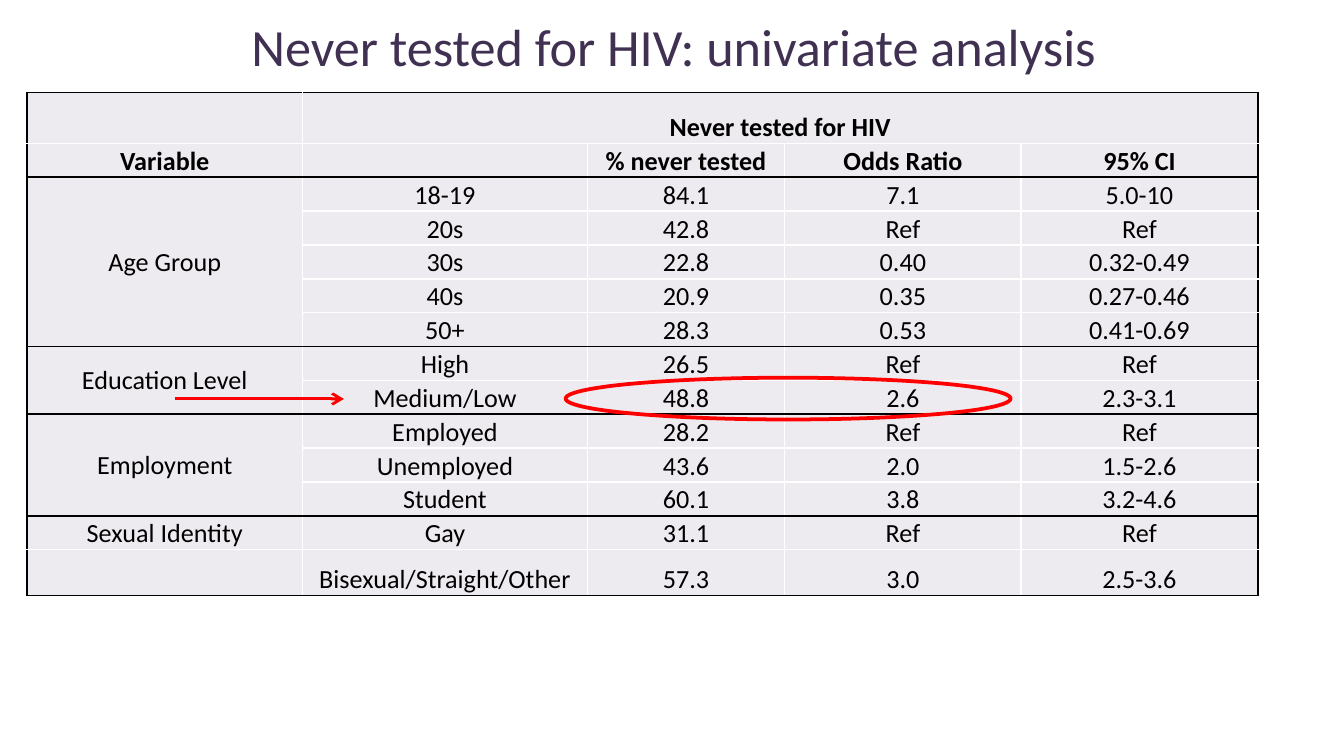
from lxml import etree
from pptx import Presentation
from pptx import util as u
from pptx.dml.color import RGBColor
from pptx.enum import shapes, text
from pptx.oxml import ns

PURPLE = RGBColor(0x40, 0x31, 0x52)
LILAC = RGBColor(0xED, 0xEA, 0xF0)
BLACK = RGBColor(0, 0, 0)
WHITE = RGBColor(255, 255, 255)
RED = RGBColor(255, 0, 0)
FONT = "Calibri"

COLUMN_WIDTHS = (5.21, 5.38, 3.73, 4.47, 4.47)
HEADER_HEIGHT, ROW_HEIGHT, LAST_HEIGHT = 0.96, 0.64, 0.87
HEADINGS = [
    ("", "Never tested for HIV", "", "", ""),
    ("Variable", "", "% never tested", "Odds Ratio", "95% CI"),
]
VARIABLES = [
    ("Age Group", True, [
        ("18-19", "84.1", "7.1", "5.0-10"),
        ("20s", "42.8", "Ref", "Ref"),
        ("30s", "22.8", "0.40", "0.32-0.49"),
        ("40s", "20.9", "0.35", "0.27-0.46"),
        ("50+", "28.3", "0.53", "0.41-0.69"),
    ]),
    ("Education Level", True, [
        ("High", "26.5", "Ref", "Ref"),
        ("Medium/Low", "48.8", "2.6", "2.3-3.1"),
    ]),
    ("Employment", True, [
        ("Employed", "28.2", "Ref", "Ref"),
        ("Unemployed", "43.6", "2.0", "1.5-2.6"),
        ("Student", "60.1", "3.8", "3.2-4.6"),
    ]),
    ("Sexual Identity", False, [
        ("Gay", "31.1", "Ref", "Ref"),
        ("Bisexual/Straight/Other", "57.3", "3.0", "2.5-3.6"),
    ]),
]


def write(frame, words, size, color, bold=False):
    """Add one centred run, or only its text size when there are no words."""
    paragraph = frame.paragraphs[0]
    paragraph.alignment = text.PP_ALIGN.CENTER
    if not words:
        etree.SubElement(paragraph._p, ns.qn("a:endParaRPr"), sz=str(size * 100))
        return
    run = paragraph.add_run()
    run.text = words
    run.font.name = FONT
    run.font.size = u.Pt(size)
    run.font.bold = bold
    run.font.color.rgb = color


def add_title(slide, words):
    """Place the heading across the top of the slide."""
    heading = slide.shapes.add_textbox(u.Cm(1.3), u.Cm(0), u.Cm(22.86), u.Cm(1.73))
    heading.text_frame.word_wrap = True
    heading.text_frame.vertical_anchor = text.MSO_ANCHOR.MIDDLE
    write(heading.text_frame, words, 28, PURPLE)


def set_borders(cell, colors):
    """Draw 1 pt cell edges in the order left, right, top, bottom."""
    properties = cell._tc.get_or_add_tcPr()
    for index, (side, color) in enumerate(zip("LRTB", colors)):
        edge = etree.Element(ns.qn(f"a:ln{side}"), w=str(u.Pt(1)))
        fill = etree.SubElement(edge, ns.qn("a:solidFill"))
        etree.SubElement(fill, ns.qn("a:srgbClr"), val=str(color))
        properties.insert(index, edge)


def fill_cell(cell, words, bold, anchor):
    """Give a cell its text, small insets and background."""
    cell.margin_left = cell.margin_right = cell.margin_top = u.Cm(0.02)
    cell.margin_bottom = 0
    cell.vertical_anchor = anchor
    cell.fill.solid()
    cell.fill.fore_color.rgb = LILAC
    write(cell.text_frame, words, 14, BLACK, bold)


def add_results(slide):
    """Build the results table with black rules around each variable."""
    rows, section_starts = list(HEADINGS), [0]
    for variable, _, levels in VARIABLES:
        section_starts.append(len(rows))
        rows += [(variable if i == 0 else "", *level) for i, level in enumerate(levels)]
    section_starts.append(len(rows))

    heights = [HEADER_HEIGHT] + [ROW_HEIGHT] * (len(rows) - 2) + [LAST_HEIGHT]
    frame = slide.shapes.add_table(
        len(rows), len(COLUMN_WIDTHS), u.Cm(0.51), u.Cm(1.75),
        u.Cm(sum(COLUMN_WIDTHS)), u.Cm(sum(heights)))
    results = frame.table
    results.first_row = results.horz_banding = False
    for column, width in zip(results.columns, COLUMN_WIDTHS):
        column.width = u.Cm(width)
    for row, height in zip(results.rows, heights):
        row.height = u.Cm(height)

    last_column = len(COLUMN_WIDTHS) - 1
    results.cell(0, 1).merge(results.cell(0, last_column))
    for (_, merged, levels), start in zip(VARIABLES, section_starts[1:]):
        if merged:
            results.cell(start, 0).merge(results.cell(start + len(levels) - 1, 0))

    for r, row in enumerate(rows):
        for c, words in enumerate(row):
            cell = results.cell(r, c)
            middle = c == 0 and r >= len(HEADINGS)
            anchor = text.MSO_ANCHOR.MIDDLE if middle else text.MSO_ANCHOR.BOTTOM
            fill_cell(cell, words, r < len(HEADINGS), anchor)
            if cell.is_spanned:
                continue
            height = cell.span_height if cell.is_merge_origin else 1
            width = cell.span_width if cell.is_merge_origin else 1
            outer = (c == 0, c + width > last_column,
                     r in section_starts, r + height in section_starts)
            set_borders(cell, [BLACK if edge else WHITE for edge in outer])


def add_highlight(slide):
    """Ring the figures for medium or low education."""
    ring = slide.shapes.add_shape(
        shapes.MSO_SHAPE.OVAL, u.Cm(10.69), u.Cm(7.14), u.Cm(8.41), u.Cm(0.79))
    ring.shadow.inherit = False
    ring.fill.background()
    ring.line.color.rgb = RED
    ring.line.width = u.Pt(2)


def add_arrow(slide):
    """Point an open arrow at the medium or low level."""
    pointer = slide.shapes.add_connector(
        shapes.MSO_CONNECTOR.STRAIGHT, u.Cm(3.3), u.Cm(7.54), u.Cm(6.5), u.Cm(7.54))
    pointer.line.color.rgb = RED
    pointer.line.width = u.Pt(1.5)
    etree.SubElement(pointer.line._get_or_add_ln(), ns.qn("a:tailEnd"), type="arrow")
    etree.SubElement(pointer._element.spPr, ns.qn("a:effectLst"))


def main():
    """Create and save the slide."""
    deck = Presentation()
    deck.slide_width, deck.slide_height = u.Cm(25.4), u.Cm(14.29)
    slide = deck.slides.add_slide(deck.slide_layouts[6])
    add_title(slide, "Never tested for HIV: univariate analysis")
    add_results(slide)
    add_highlight(slide)
    add_arrow(slide)
    deck.save("out.pptx")


if __name__ == "__main__":
    main()
